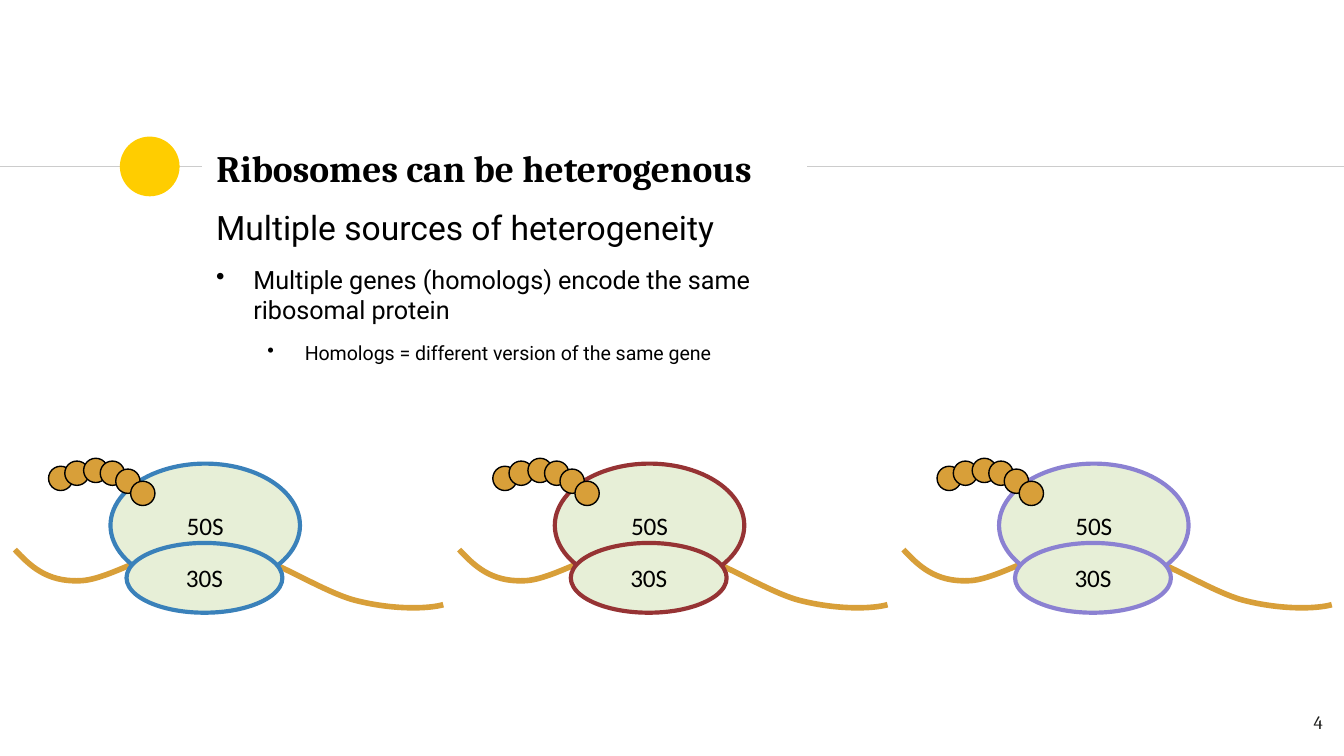
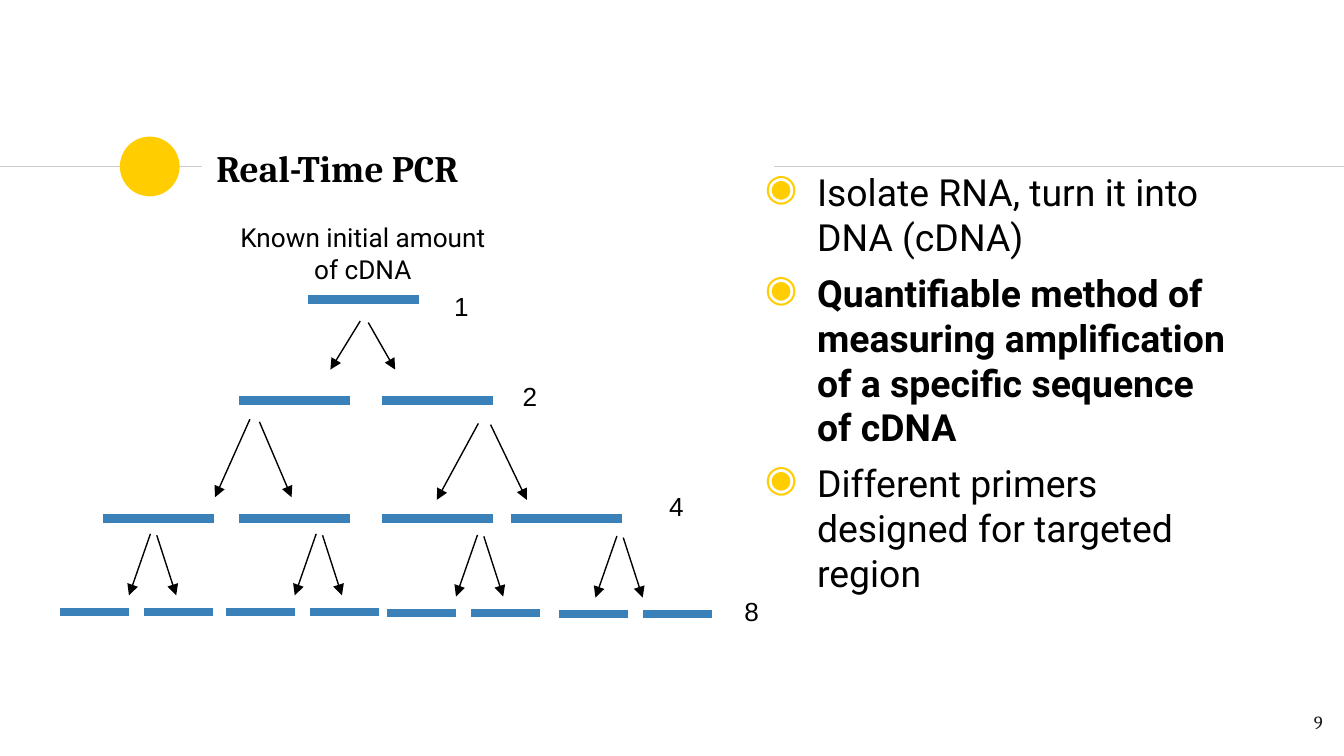
from pptx import Presentation
from pptx.dml.color import RGBColor
from pptx.enum.shapes import MSO_CONNECTOR, MSO_SHAPE
from pptx.enum.text import MSO_ANCHOR, MSO_AUTO_SIZE, PP_ALIGN
from pptx.oxml.ns import qn
from pptx.oxml.xmlchemy import OxmlElement
from pptx.util import Pt

STRAIGHT = MSO_CONNECTOR.STRAIGHT
ELLIPSE, RECTANGLE = MSO_SHAPE.OVAL, MSO_SHAPE.RECTANGLE
LEFT, CENTER, RIGHT = PP_ALIGN.LEFT, PP_ALIGN.CENTER, PP_ALIGN.RIGHT
MIDDLE = MSO_ANCHOR.MIDDLE
NO_FIT, GROW = MSO_AUTO_SIZE.NONE, MSO_AUTO_SIZE.SHAPE_TO_FIT_TEXT

BLACK = RGBColor(0x00, 0x00, 0x00)
WHITE = RGBColor(0xFF, 0xFF, 0xFF)
GRAY = RGBColor(0xCC, 0xCC, 0xCC)
INK = RGBColor(0x1D, 0x1D, 0x1B)
YELLOW = RGBColor(0xFF, 0xCD, 0x00)
OCHRE = RGBColor(0xD8, 0x9F, 0x39)
PALE_GREEN = RGBColor(0xE7, 0xEF, 0xD7)
BLUE = RGBColor(0x3A, 0x81, 0xBA)
RED = RGBColor(0x96, 0x33, 0x34)
PURPLE = RGBColor(0x8B, 0x81, 0xD2)

HEADING_FONT, BODY_FONT, UNIT_FONT, COUNT_FONT = "Cambria", "Roboto", "Calibri", "Arial"

RULES = [(0, 108), (414.7, 720)]
RULE_Y = 89.3

# text, size, bold, level, (margin, indent), space before, bullet, bullet colour
HETEROGENEITY = [
    ("Multiple sources of heterogeneity", 18, False, 0, None),
    ("Multiple genes (homologs) encode the same ribosomal protein", 13.5, False, 0,
     (20, -20, 9, "•", BLACK)),
    ("Homologs = different version of the same gene", 10.5, False, 1,
     (47.5, -20, 9, "•", BLACK)),
]
PCR_BULLET = (36, -28, 6, "◉", YELLOW)
PCR_POINTS = [
    ("Isolate RNA, turn it into DNA (cDNA)", 20, False, 0, PCR_BULLET),
    ("Quantifiable method of measuring amplification of a specific sequence of cDNA",
     20, True, 0, PCR_BULLET),
    ("Different primers designed for targeted region", 20, False, 0, PCR_BULLET),
]

RIBOSOME_COLORS = [BLUE, RED, PURPLE]
RIBOSOME_LEFT, RIBOSOME_PITCH = 8, 238
SUBUNITS = [("50S", 51.2, 248.4, 101.5, 66.2), ("30S", 59.8, 290.9, 83.5, 37.4)]
BEADS = [(18, 249.8), (26.7, 247), (36.8, 245.5), (45.7, 247), (54, 251.3), (62, 257.8)]
BEAD_SIZE = 13
MESSENGER = [
    (0, 294.5), (8, 303), (16.8, 311.8), (34.5, 311.2),
    (52, 311), (80.6, 289.4), (105, 291.4),
    (129.6, 293.2), (161.3, 316), (182, 321.6),
    (203, 327), (222, 326.2), (229.5, 324),
]

LONG_STRAND, SHORT_STRAND = 59.4, 36.8
LONG_STRANDS = [
    (160.5, [165]),
    (214.6, [128.2, 204.6]),
    (277.8, [55.4, 128.2, 204.6, 274]),
]
UPPER_ARROWS = [
    (193, 172, 177, 198), (197.3, 172.8, 211.7, 198),
    (256.3, 226.8, 234, 267.8), (262.8, 227.5, 282.2, 267.8),
    (133.9, 224.6, 115.2, 266.4), (139, 226, 156.2, 266.4),
]
FORK = [(0, 0, -11.5, 33), (3.4, 0.8, 13.8, 33)]
SHORT_PAIRS = [(80.6, 286, 32.4), (169.4, 286, 121), (255.8, 286.6, 207.4), (330.5, 287.2, 299.6)]
PAIR_PITCH, PAIR_DROP = 45, 41.8
COUNTS = [("1", 236.2, 151.9, 19.4), ("2", 272.9, 200.2, 26),
          ("4", 351.4, 259.2, 26), ("8", 391.7, 315.4, 26)]


def style(para, size, font, color=BLACK, bold=False, align=LEFT):
    para.alignment = align
    for span in para.runs:
        span.font.size = Pt(size)
        span.font.name = font
        span.font.bold = bold
        span.font.color.rgb = color


def set_insets(frame, side, end):
    frame.margin_left = frame.margin_right = Pt(side)
    frame.margin_top = frame.margin_bottom = Pt(end)


def add_text(slide, place, text, size, font, color=BLACK, align=LEFT, inset=3.6, fit=GROW):
    frame = slide.shapes.add_textbox(*map(Pt, place)).text_frame
    frame.word_wrap = True
    frame.auto_size = fit
    set_insets(frame, 7.2, inset)
    frame.text = text
    style(frame.paragraphs[0], size, font, color, align=align)
    return frame


def set_bullet(para, margin, indent, space, mark, color):
    para.space_before = Pt(space)
    properties = para._p.get_or_add_pPr()
    properties.set("marL", str(Pt(margin)))
    properties.set("indent", str(Pt(indent)))
    tint = OxmlElement("a:buClr")
    value = OxmlElement("a:srgbClr")
    value.set("val", str(color))
    tint.append(value)
    bullet = OxmlElement("a:buChar")
    bullet.set("char", mark)
    properties.append(tint)
    properties.append(bullet)


def add_points(slide, place, points, inset, fit):
    frame = add_text(slide, place, "", 20, BODY_FONT, inset=inset, fit=fit)
    for index, (text, size, bold, level, bullet) in enumerate(points):
        para = frame.add_paragraph() if index else frame.paragraphs[0]
        para.text = text
        para.level = level
        style(para, size, BODY_FONT, bold=bold)
        if bullet:
            set_bullet(para, *bullet)


def add_line(shapes, x1, y1, x2, y2, color, width, arrow=False):
    line = shapes.add_connector(STRAIGHT, Pt(x1), Pt(y1), Pt(x2), Pt(y2))
    line.line.color.rgb = color
    line.line.width = Pt(width)
    properties = line.element.spPr
    if arrow:
        head = OxmlElement("a:tailEnd")
        head.set("type", "triangle")
        properties.find(qn("a:ln")).append(head)
    properties.append(OxmlElement("a:effectLst"))


def add_shape(shapes, kind, place, fill, outline, width):
    shape = shapes.add_shape(kind, *map(Pt, place))
    shape.shadow.inherit = False
    shape.fill.solid()
    shape.fill.fore_color.rgb = fill
    if outline is None:
        shape.line.fill.background()
    else:
        shape.line.color.rgb = outline
        shape.line.width = Pt(width)
    return shape


def add_curve(shapes, points, color, width):
    corners = [(Pt(x), Pt(y)) for x, y in points]
    builder = shapes.build_freeform(*corners[0])
    builder.add_line_segments(corners[1:], close=False)
    curve = builder.convert_to_shape()
    segments = list(curve.element.iter(qn("a:lnTo")))
    for start in range(0, len(segments), 3):
        bezier = OxmlElement("a:cubicBezTo")
        segments[start].addprevious(bezier)
        for segment in segments[start:start + 3]:
            bezier.append(segment[0])
            segment.getparent().remove(segment)
    curve.shadow.inherit = False
    curve.fill.background()
    curve.line.color.rgb = color
    curve.line.width = Pt(width)


def add_page(deck, title_text, number, title_width, rule_cover=None):
    page = deck.slides.add_slide(deck.slide_layouts[5])
    for start, end in RULES:
        add_line(page.shapes, start, RULE_Y, end, RULE_Y, GRAY, 0.75)
    add_shape(page.shapes, ELLIPSE, (64.2, 73.2, 32, 32), YELLOW, None, 0)
    if rule_cover:
        add_shape(page.shapes, RECTANGLE, rule_cover, WHITE, WHITE, 2)
    title = page.shapes.title
    title.element.getparent().append(title.element)
    title.left, title.top, title.width, title.height = map(Pt, (108.7, 72.7, title_width, 34.6))
    frame = title.text_frame
    frame.text = title_text
    frame.auto_size = NO_FIT
    frame.vertical_anchor = MIDDLE
    set_insets(frame, 7.2, 7.2)
    style(frame.paragraphs[0], 20, HEADING_FONT, bold=True)
    add_text(page, (672.5, 373.7, 43.2, 31), number, 10, HEADING_FONT, INK, RIGHT, 7.2, NO_FIT)
    return page


def add_ribosome(page, left, color):
    shapes = page.shapes.add_group_shape().shapes
    add_curve(shapes, [(left + x, y) for x, y in MESSENGER], OCHRE, 3)
    for label, x, y, width, height in SUBUNITS:
        subunit = add_shape(shapes, ELLIPSE, (left + x, y, width, height), PALE_GREEN, color, 2.25)
        frame = subunit.text_frame
        frame.text = label
        frame.vertical_anchor = MIDDLE
        style(frame.paragraphs[0], 13.5, UNIT_FONT, align=CENTER)
    for x, y in BEADS:
        add_shape(shapes, ELLIPSE, (left + x, y, BEAD_SIZE, BEAD_SIZE), OCHRE, BLACK, 0.75)


def add_strand(page, left, y, length):
    add_line(page.shapes, left, y, left + length, y, BLUE, 4.5)


def add_arrow(page, x1, y1, x2, y2):
    add_line(page.shapes, x1, y1, x2, y2, BLACK, 0.75, arrow=True)


def build_ribosomes(deck):
    page = add_page(deck, "Ribosomes can be heterogenous", "4", 326.9, (391, 72.7, 40.3, 31))
    add_points(page, (108.7, 107.3, 305.3, 92.9), HETEROGENEITY, 3.6, GROW)
    for index, color in enumerate(RIBOSOME_COLORS):
        add_ribosome(page, RIBOSOME_LEFT + index * RIBOSOME_PITCH, color)


def build_pcr(deck):
    page = add_page(deck, "Real-Time PCR", "9", 305.3)
    add_points(page, (394.6, 83.5, 270, 249), PCR_POINTS, 7.2, NO_FIT)
    add_text(page, (121, 115.2, 146.9, 41), "Known initial amount of cDNA", 14, BODY_FONT, align=CENTER)
    for y, lefts in LONG_STRANDS:
        for left in lefts:
            add_strand(page, left, y, LONG_STRAND)
    for arrow in UPPER_ARROWS:
        add_arrow(page, *arrow)
    for x, y, left in SHORT_PAIRS:
        for x1, y1, x2, y2 in FORK:
            add_arrow(page, x + x1, y + y1, x + x2, y + y2)
        for step in range(2):
            add_strand(page, left + step * PAIR_PITCH, y + PAIR_DROP, SHORT_STRAND)
    for text, left, top, width in COUNTS:
        add_text(page, (left, top, width, 24.5), text, 14, COUNT_FONT)


def main():
    deck = Presentation()
    deck.slide_width, deck.slide_height = Pt(720), Pt(405)
    build_ribosomes(deck)
    build_pcr(deck)
    deck.save("out.pptx")


if __name__ == "__main__":
    main()
